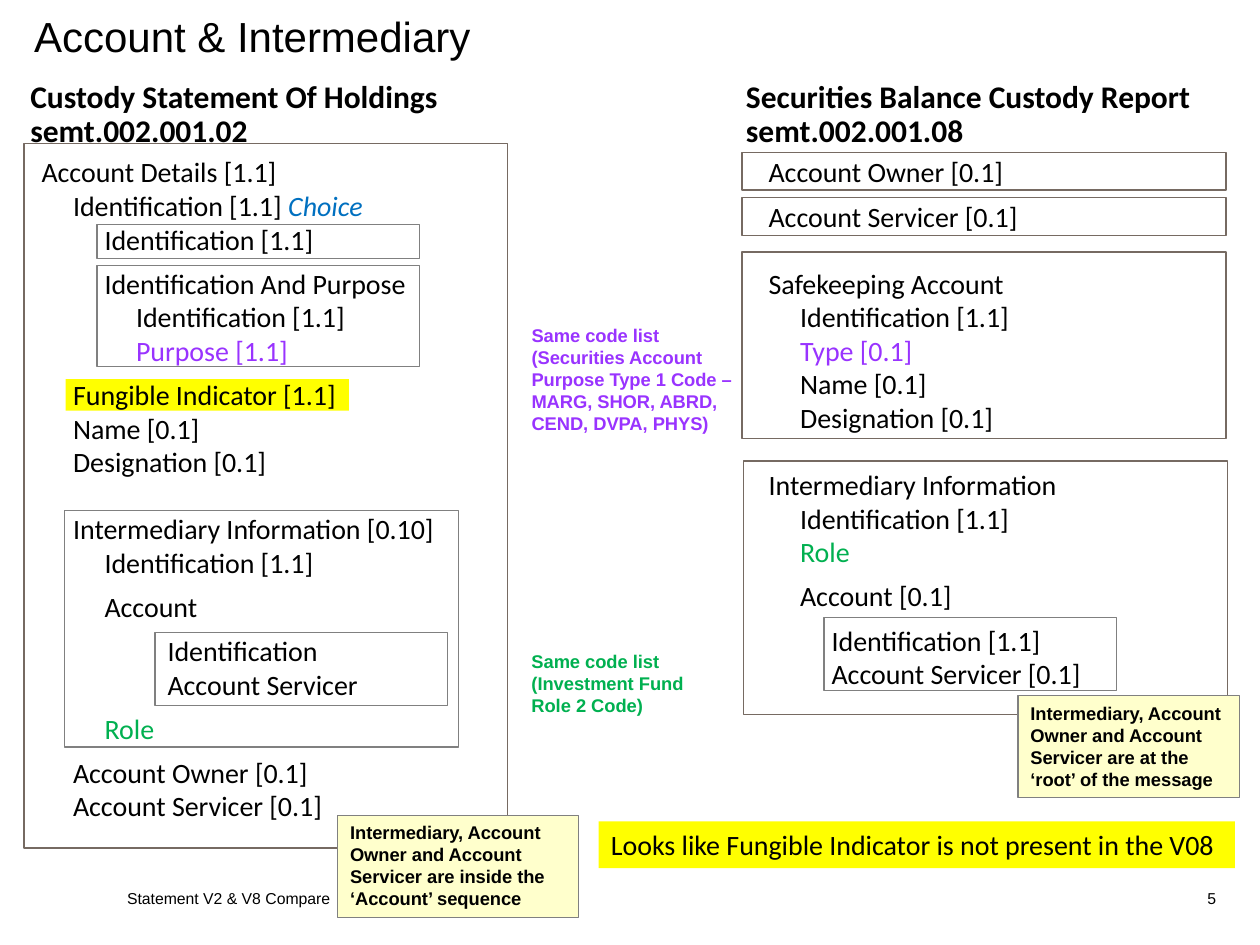
from dataclasses import dataclass
from typing import NamedTuple, Optional

from lxml import etree
from pptx import Presentation
from pptx.dml.color import RGBColor
from pptx.enum.shapes import MSO_SHAPE as Shape
from pptx.enum.text import MSO_ANCHOR as Anchor, MSO_AUTO_SIZE as AutoSize, PP_ALIGN as Align
from pptx.oxml.ns import qn
from pptx.util import Inches, Pt


@dataclass(frozen=True)
class Theme:
    heading_font: str = "Arial"
    list_font: str = "Calibri"
    black: str = "000000"
    purple: str = "9933FF"
    green: str = "00B050"
    blue: str = "0070C0"
    brown: str = "766A62"
    grey: str = "808080"
    yellow: str = "FFFF00"
    cream: str = "FFFFCC"
    title: float = 24
    heading: float = 18
    item: float = 16
    note: float = 10.5
    footer: float = 9
    gap: float = 6
    section_gap: float = 19.2
    indent: float = 0.25


T = Theme()


class Area(NamedTuple):
    x: float
    y: float
    w: float
    h: float


class Style(NamedTuple):
    font: str
    size: float
    color: str = T.black
    bold: bool = False


class Item(NamedTuple):
    level: int
    text: str
    color: str = T.black
    after: float = 0
    choice: str = ""


class Box(NamedTuple):
    area: Area
    line: Optional[str]
    fill: Optional[str] = None
    text: str = ""
    style: Optional[Style] = None


class Label(NamedTuple):
    area: Area
    text: str
    style: Style
    anchor: Anchor = Anchor.TOP
    align: Align = Align.LEFT


TITLE = Style(T.heading_font, T.title)
HEADING = Style(T.list_font, T.heading, bold=True)
ITEM = Style(T.list_font, T.item)
NOTE = Style(T.heading_font, T.note, bold=True)
FOOTER = Style(T.heading_font, T.footer)

V2_ITEMS = [
    Item(0, "Account Details [1.1]"),
    Item(1, "Identification [1.1] ", choice="Choice"),
    Item(2, "Identification [1.1]", after=T.gap),
    Item(2, "Identification And Purpose"),
    Item(3, "Identification [1.1]"),
    Item(3, "Purpose [1.1]", T.purple, T.gap),
    Item(1, "Fungible Indicator [1.1]"),
    Item(1, "Name [0.1]"),
    Item(1, "Designation [0.1]", after=T.section_gap),
    Item(1, "Intermediary Information [0.10]"),
    Item(2, "Identification [1.1]", after=T.gap),
    Item(2, "Account", after=T.gap),
    Item(4, "Identification"),
    Item(4, "Account Servicer", after=T.gap),
    Item(2, "Role", T.green, T.gap),
    Item(1, "Account Owner [0.1]"),
    Item(1, "Account Servicer [0.1]"),
]
V8_ITEMS = [
    Item(0, "Account Owner [0.1]", after=T.gap),
    Item(0, "Account Servicer [0.1]", after=T.section_gap),
    Item(0, "Safekeeping Account"),
    Item(1, "Identification [1.1]"),
    Item(1, "Type [0.1]", T.purple),
    Item(1, "Name [0.1]"),
    Item(1, "Designation [0.1]", after=T.section_gap),
    Item(0, "Intermediary Information"),
    Item(1, "Identification [1.1]"),
    Item(1, "Role", T.green, T.gap),
    Item(1, "Account [0.1]", after=T.gap),
    Item(2, "Identification [1.1]"),
    Item(2, "Account Servicer [0.1]"),
]
FUNGIBLE_MARK = Box(Area(0.52, 3.01, 2.25, 0.25), None, T.yellow)
BOXES = [
    Box(Area(0.19, 1.14, 3.84, 5.59), T.brown),
    Box(Area(5.89, 1.21, 3.84, 0.3), T.brown),
    Box(Area(5.89, 1.57, 3.84, 0.3), T.brown),
    Box(Area(5.89, 2, 3.84, 1.48), T.brown),
    Box(Area(5.9, 3.66, 3.84, 2.01), T.brown),
    Box(Area(0.77, 1.78, 2.56, 0.27), T.grey),
    Box(Area(0.77, 2.11, 2.56, 0.8), T.grey),
    Box(Area(0.51, 4.05, 3.13, 1.88), T.grey),
    Box(Area(1.23, 5.02, 2.32, 0.58), T.grey),
    Box(Area(6.54, 4.9, 2.32, 0.58), T.grey),
    Box(Area(2.68, 6.47, 1.91, 0.81), T.grey, T.cream,
        "Intermediary, Account Owner and Account Servicer are inside the ‘Account’ sequence", NOTE),
    Box(Area(8.08, 5.52, 1.76, 0.81), T.grey, T.cream,
        "Intermediary, Account Owner and Account Servicer are at the ‘root’ of the message", NOTE),
    Box(Area(4.75, 6.52, 5.05, 0.37), None, T.yellow,
        "Looks like Fungible Indicator is not present in the V08", ITEM),
]
LABELS = [
    Label(Area(4.12, 2.52, 1.82, 0.98),
          "Same code list (Securities Account Purpose Type 1 Code – MARG, SHOR, ABRD, CEND, DVPA, PHYS)",
          NOTE._replace(color=T.purple)),
    Label(Area(4.12, 5.11, 1.46, 0.63), "Same code list (Investment Fund Role 2 Code)",
          NOTE._replace(color=T.green)),
    Label(Area(0.91, 7, 6.21, 0.25), "Statement V2 & V8 Compare", FOOTER, Anchor.MIDDLE),
    Label(Area(8.92, 7, 0.83, 0.25), "5", FOOTER, Anchor.MIDDLE, Align.RIGHT),
]


def add_run(p, text: str, style: Style, italic: bool = False) -> None:
    r = p.add_run()
    r.text = text
    r.font.name, r.font.size = style.font, Pt(style.size)
    r.font.bold, r.font.italic = style.bold, italic
    r.font.color.rgb = RGBColor.from_string(style.color)


def setup_frame(sp, anchor: Anchor = Anchor.TOP):
    tf = sp.text_frame
    tf.word_wrap = True
    tf.auto_size = AutoSize.NONE
    tf.vertical_anchor = anchor
    return tf


def place(sp, area: Area, anchor: Anchor = Anchor.TOP):
    sp.left, sp.top, sp.width, sp.height = map(Inches, area)
    return setup_frame(sp, anchor)


def next_paragraph(tf, first: bool, level: int = 0):
    p = tf.paragraphs[0] if first else tf.add_paragraph()
    pPr = p._p.get_or_add_pPr()
    pPr.set("marL", str(Inches(T.indent * level)))
    pPr.set("indent", "0")
    etree.SubElement(pPr, qn("a:buNone"))
    p.alignment = Align.LEFT
    p.space_before = Pt(0)
    return p


def fill_heading(sp, area: Area, lines: list[str]) -> None:
    tf = place(sp, area)
    for i, line in enumerate(lines):
        p = next_paragraph(tf, i == 0)
        p.line_spacing = Pt(19)
        add_run(p, line, HEADING)


def fill_list(sp, area: Area, items: list[Item]) -> None:
    tf = place(sp, area)
    for i, item in enumerate(items):
        p = next_paragraph(tf, i == 0, item.level)
        p.space_after = Pt(item.after)
        add_run(p, item.text, ITEM._replace(color=item.color))
        if item.choice:
            add_run(p, item.choice, ITEM._replace(color=T.blue), italic=True)


def add_box(s, box: Box):
    sp = s.shapes.add_shape(Shape.RECTANGLE, *map(Inches, box.area))
    sp.shadow.inherit = False
    if box.fill:
        sp.fill.solid()
        sp.fill.fore_color.rgb = RGBColor.from_string(box.fill)
    else:
        sp.fill.background()
    if box.line:
        sp.line.color.rgb = RGBColor.from_string(box.line)
        sp.line.width = Pt(0.75)
    else:
        sp.line.fill.background()
    if box.text:
        p = setup_frame(sp).paragraphs[0]
        p.alignment = Align.LEFT
        add_run(p, box.text, box.style)
    return sp


def add_label(s, label: Label) -> None:
    sp = s.shapes.add_textbox(*map(Inches, label.area))
    p = setup_frame(sp, label.anchor).paragraphs[0]
    p.alignment = label.align
    add_run(p, label.text, label.style)


def main() -> None:
    prs = Presentation()
    prs.slide_width, prs.slide_height = Inches(10), Inches(7.5)
    s = prs.slides.add_slide(prs.slide_layouts.get_by_name("Comparison"))
    title, v2_head, v2_list, v8_head, v8_list = s.placeholders
    p = place(title, Area(0.17, 0, 9.73, 0.56), Anchor.MIDDLE).paragraphs[0]
    p.alignment = Align.LEFT
    add_run(p, "Account & Intermediary", TITLE)
    fill_heading(v2_head, Area(0.14, 0.6, 3.46, 0.63), ["Custody Statement Of Holdings", "semt.002.001.02"])
    fill_heading(v8_head, Area(5.82, 0.6, 3.76, 0.63), ["Securities Balance Custody Report", "semt.002.001.08"])
    fill_list(v2_list, Area(0.23, 1.18, 3.36, 5.45), V2_ITEMS)
    fill_list(v8_list, Area(6, 1.18, 2.71, 4.39), V8_ITEMS)
    title.element.addprevious(add_box(s, FUNGIBLE_MARK).element)
    for box in BOXES:
        add_box(s, box)
    for label in LABELS:
        add_label(s, label)
    prs.save("out.pptx")


if __name__ == "__main__":
    main()
